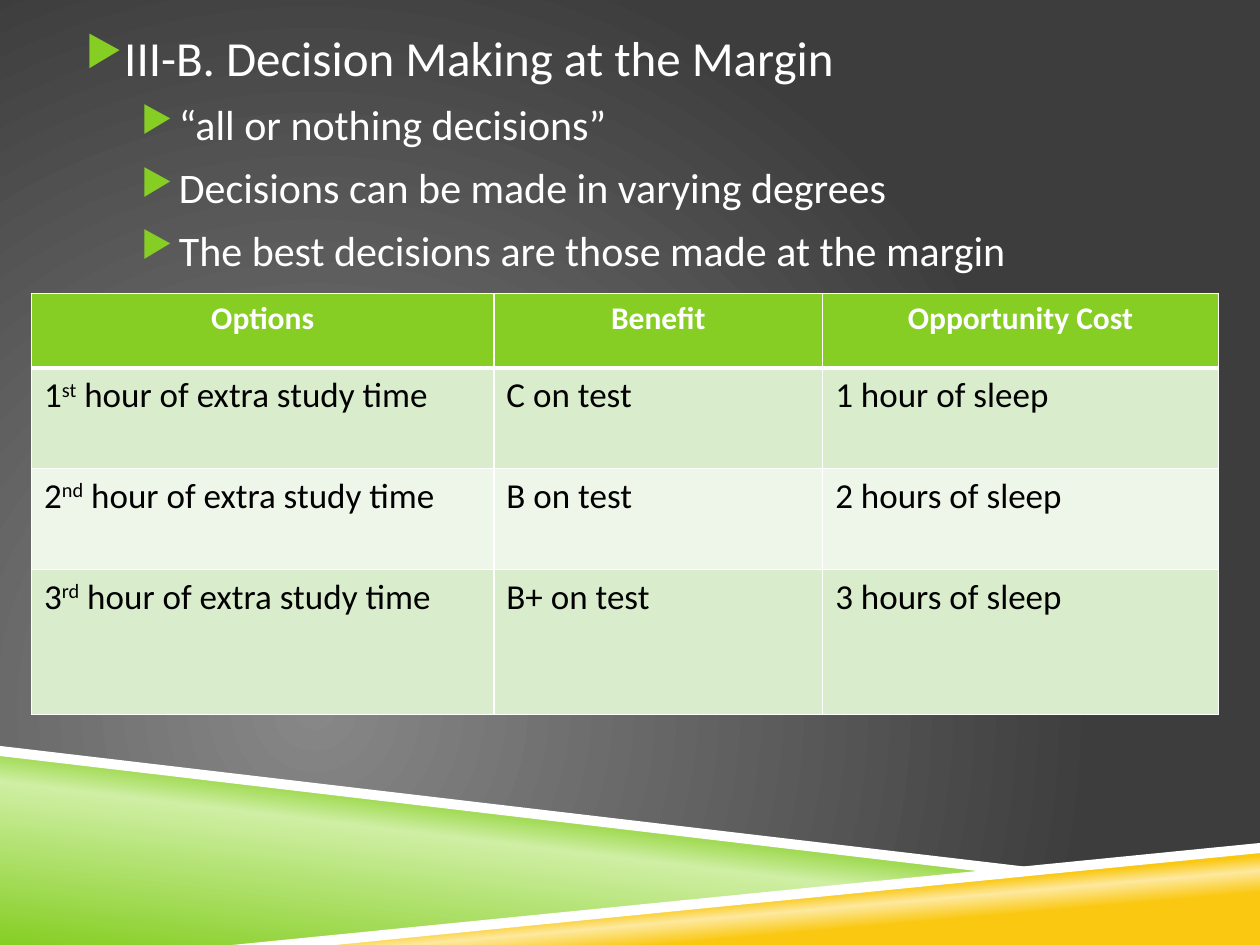
from lxml import etree
from pptx import Presentation
from pptx.dml.color import RGBColor
from pptx.enum.text import MSO_ANCHOR, PP_ALIGN
from pptx.oxml.ns import qn
from pptx.util import Inches, Pt

TOP = MSO_ANCHOR.TOP
LEFT = PP_ALIGN.LEFT
CENTER = PP_ALIGN.CENTER

GREEN = "86CE24"
GOLD = "FAC810"
WHITE = "FFFFFF"
BLACK = "000000"


def rgb(code):
    return RGBColor.from_string(code)


def node(root, tag, **attrs):
    item = etree.SubElement(root, qn(tag))
    for name, value in attrs.items():
        item.set(name, str(value))
    return item


def write(para, text, size=20, color=BLACK, bold=False, raised=False):
    run = para.add_run()
    run.text = text
    font = run.font
    font.name = "Calibri"
    font.size = Pt(size)
    font.bold = bold
    font.color.rgb = rgb(color)
    if raised:
        run._r.get_or_add_rPr().set("baseline", "30000")


def blend(root, stops):
    grad = root.find(".//" + qn("a:gradFill"))
    for child in list(grad):
        grad.remove(child)
    group = node(grad, "a:gsLst")
    for place, color in stops:
        stop = node(group, "a:gs", pos=place * 1000)
        node(stop, "a:srgbClr", val=color)
    return grad


class Deck:
    font_color = WHITE
    bullet = "▶"
    bands = ("D9EDCD", "EDF6E8")

    def __init__(self, wide, high):
        self.file = Presentation()
        self.file.slide_width = Inches(wide)
        self.file.slide_height = Inches(high)
        self.slide = self.file.slides.add_slide(self.file.slide_layouts[6])

    def back(self, stops):
        self.slide.background.fill.gradient()
        grad = blend(self.slide._element, stops)
        glow = node(grad, "a:path", path="circle")
        node(glow, "a:fillToRect", l=50000, t=100000, r=100000, b=50000)

    def shape(self, points, color=None, stops=None, angle=0):
        spots = [(Inches(x), Inches(y)) for x, y in points]
        pen = self.slide.shapes.build_freeform(*spots[0])
        pen.add_line_segments(spots[1:], close=True)
        form = pen.convert_to_shape()
        form.shadow.inherit = False
        form.line.fill.background()
        if stops:
            form.fill.gradient()
            grad = blend(form._element, stops)
            node(grad, "a:lin", ang=angle * 60000, scaled=0)
        else:
            form.fill.solid()
            form.fill.fore_color.rgb = rgb(color)

    def bullets(self, box, items):
        frame = self.slide.shapes.add_textbox(*map(Inches, box)).text_frame
        frame.word_wrap = True
        frame.vertical_anchor = TOP
        frame.margin_left = frame.margin_right = 0
        for i, (text, level, size, indent) in enumerate(items):
            para = frame.paragraphs[0] if i == 0 else frame.add_paragraph()
            para.level = level
            para.alignment = LEFT
            if i:
                para.space_before = Pt(7)
            props = para._p.get_or_add_pPr()
            props.set("marL", str(Inches(indent)))
            props.set("indent", str(Inches(-0.3)))
            tint = node(props, "a:buClr")
            node(tint, "a:srgbClr", val=GREEN)
            node(props, "a:buSzPct", val=85000)
            node(props, "a:buChar", char=self.bullet)
            write(para, text, size, self.font_color)

    def border(self, cell, bottom):
        props = cell._tc.get_or_add_tcPr()
        for i, side in enumerate("LRTB"):
            width = bottom if side == "B" else 1
            line = node(props, "a:ln" + side, w=Pt(width))
            fill = node(line, "a:solidFill")
            node(fill, "a:srgbClr", val=WHITE)
            props.insert(i, line)

    def table(self, box, cols, highs, head, rows):
        frame = self.slide.shapes.add_table(
            len(highs), len(cols), *map(Inches, box))
        grid = frame.table
        for col, width in zip(grid.columns, cols):
            col.width = Inches(width)
        for row, high in zip(grid.rows, highs):
            row.height = Inches(high)
        for r, line in enumerate([head] + rows):
            for c, text in enumerate(line):
                cell = grid.cell(r, c)
                cell.fill.solid()
                fill = self.bands[(r - 1) % 2] if r else GREEN
                cell.fill.fore_color.rgb = rgb(fill)
                self.border(cell, 1 if r else 3)
                para = cell.text_frame.paragraphs[0]
                if r == 0:
                    para.alignment = CENTER
                    write(para, text, 18, WHITE, bold=True)
                    continue
                for i, part in enumerate(text.split("^")):
                    write(para, part, raised=i == 1)

    def save(self):
        self.file.save("out.pptx")


def main():
    deck = Deck(10, 7.5)
    deck.back([(0, "878787"), (100, "3D3D3D")])
    deck.shape([(0, 5.97), (7.92, 6.92), (2, 7.5), (0, 7.5)], angle=277,
               stops=[(0, GREEN), (52, "CFEFA4"), (66, GREEN)])
    deck.shape([(1.98, 7.5), (10, 6.72), (10, 7.5)], angle=265,
               stops=[(28, GOLD), (40, "FDE99F"), (48, GOLD)])
    deck.shape([(0, 5.92), (0, 6), (7.9, 6.93), (8.32, 6.9)], WHITE)
    deck.shape([(10, 6.69), (1.84, 7.5), (2.66, 7.5), (10, 6.77)], WHITE)

    points = ["“all or nothing decisions”",
              "Decisions can be made in varying degrees",
              "The best decisions are those made at the margin"]
    title = ("III-B. Decision Making at the Margin", 0, 28, 0.81)
    deck.bullets((0.17, 0.17, 8.5, 4.08),
                 [title] + [(text, 1, 24, 1.25) for text in points])

    study = "^ hour of extra study time"
    deck.table((0.25, 2.33, 9.42, 3.34), (3.67, 2.61, 3.14),
               (0.59, 0.8, 0.8, 1.15),
               ("Options", "Benefit", "Opportunity Cost"),
               [("1^st" + study, "C on test", "1 hour of sleep"),
                ("2^nd" + study, "B on test", "2 hours of sleep"),
                ("3^rd" + study, "B+ on test", "3 hours of sleep")])
    deck.save()


if __name__ == "__main__":
    main()
